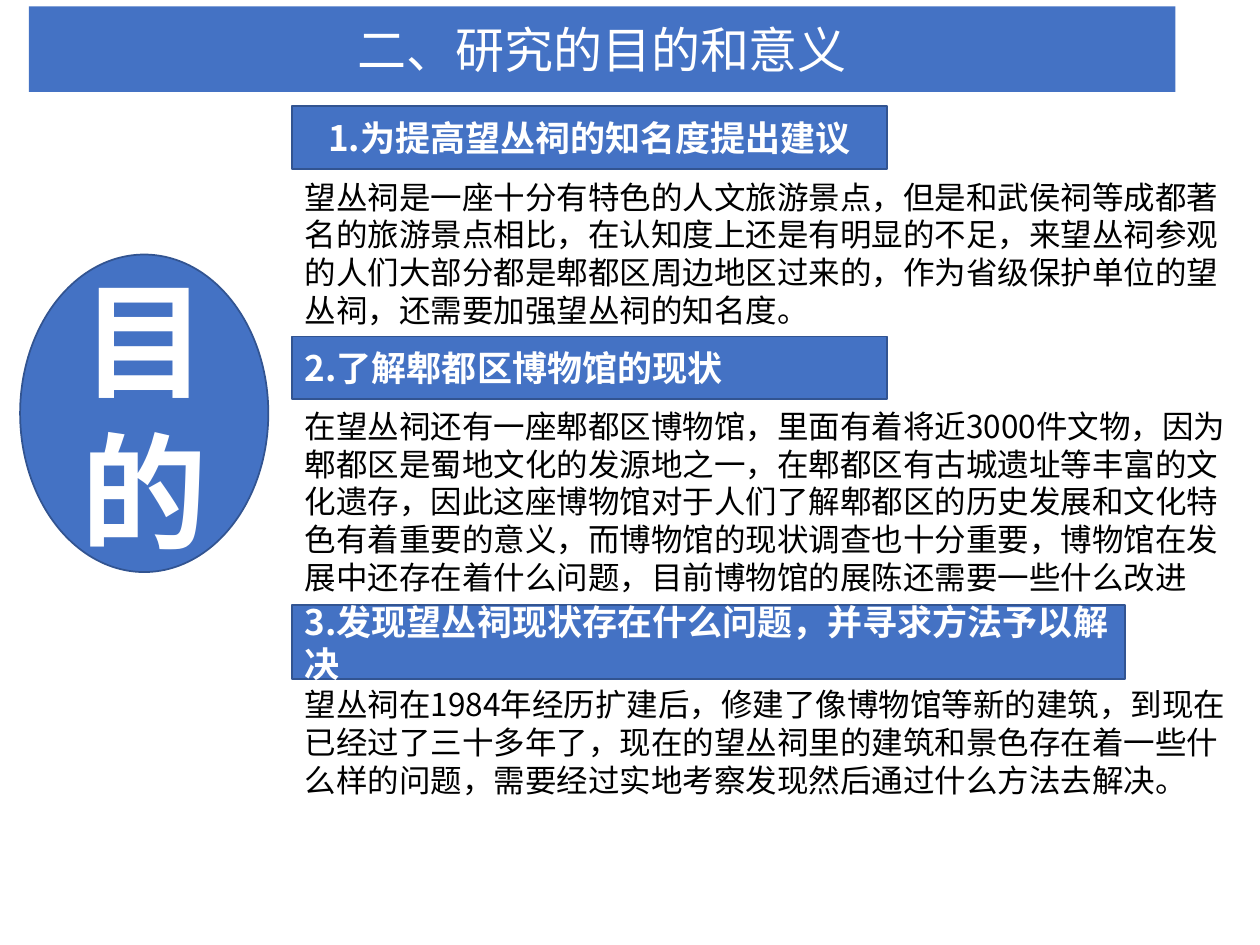
from pptx import Presentation
from pptx.dml.color import RGBColor
from pptx.enum.shapes import MSO_SHAPE
from pptx.enum.text import MSO_ANCHOR, MSO_AUTO_SIZE, PP_ALIGN
from pptx.oxml.ns import qn
from pptx.util import Inches, Pt
from lxml.etree import SubElement

COLORS = {"panel": "4472C4", "edge": "325491", "light": "FFFFFF", "dark": "000000"}
FONT = "Noto Sans CJK SC"
LINE_RATIO = 1.2
COLUMN_LEFT = 2.32


class SlideBuilder:
    def __init__(self, slide):
        self.slide = slide

    def set_text(self, element, words, size, color, bold=False, align=PP_ALIGN.LEFT, **frame_format):
        frame = element.text_frame
        for name, value in {"word_wrap": True, **frame_format}.items():
            setattr(frame, name, value)
        paragraph = frame.paragraphs[0]
        for name, value in {"alignment": align, "line_spacing": Pt(size * LINE_RATIO)}.items():
            setattr(paragraph, name, value)
        run = paragraph.add_run()
        run.text = words
        for name, value in {"name": FONT, "size": Pt(size), "bold": bold}.items():
            setattr(run.font, name, value)
        run.font.color.rgb = RGBColor.from_string(COLORS[color])
        SubElement(run._r.get_or_add_rPr(), qn("a:ea")).set("typeface", FONT)

    def panel(self, kind, box, words, size, bold=True, align=PP_ALIGN.CENTER, outlined=True):
        panel = self.slide.shapes.add_shape(kind, *map(Inches, box))
        panel.shadow.inherit = False
        panel.fill.solid()
        panel.fill.fore_color.rgb = RGBColor.from_string(COLORS["panel"])
        if outlined:
            panel.line.color.rgb = RGBColor.from_string(COLORS["edge"])
            panel.line.width = Pt(1)
        else:
            panel.line.fill.background()
        self.set_text(panel, words, size, "light", bold, align, vertical_anchor=MSO_ANCHOR.MIDDLE)

    def body(self, box, words):
        body = self.slide.shapes.add_textbox(*map(Inches, box))
        self.set_text(body, words, 18, "dark", auto_size=MSO_AUTO_SIZE.SHAPE_TO_FIT_TEXT)


SECTIONS = [
    {
        "heading": "1.为提高望丛祠的知名度提出建议",
        "heading_box": (0.84, 4.72, 0.5),
        "align": PP_ALIGN.CENTER,
        "body": "望丛祠是一座十分有特色的人文旅游景点，但是和武侯祠等成都著名的旅游景点相比，"
                "在认知度上还是有明显的不足，来望丛祠参观的人们大部分都是郫都区周边地区过来的，"
                "作为省级保护单位的望丛祠，还需要加强望丛祠的知名度。",
        "body_box": (1.36, 7.68, 1.31),
    },
    {
        "heading": "2.了解郫都区博物馆的现状",
        "heading_box": (2.67, 4.72, 0.5),
        "align": PP_ALIGN.LEFT,
        "body": "在望丛祠还有一座郫都区博物馆，里面有着将近3000件文物，因为郫都区是蜀地文化的发源地之一，"
                "在郫都区有古城遗址等丰富的文化遗存，因此这座博物馆对于人们了解郫都区的历史发展和"
                "文化特色有着重要的意义，而博物馆的现状调查也十分重要，博物馆在发展中还存在着什么问题，"
                "目前博物馆的展陈还需要一些什么改进",
        "body_box": (3.18, 7.64, 1.62),
    },
    {
        "heading": "3.发现望丛祠现状存在什么问题，并寻求方法予以解决",
        "heading_box": (4.8, 6.61, 0.59),
        "align": PP_ALIGN.LEFT,
        "body": "望丛祠在1984年经历扩建后，修建了像博物馆等新的建筑，到现在已经过了三十多年了，"
                "现在的望丛祠里的建筑和景色存在着一些什么样的问题，"
                "需要经过实地考察发现然后通过什么方法去解决。",
        "body_box": (5.39, 7.64, 1.01),
    },
]


def main():
    deck = Presentation()
    deck.slide_width, deck.slide_height = Inches(10), Inches(7.5)
    builder = SlideBuilder(deck.slides.add_slide(deck.slide_layouts[6]))
    builder.panel(MSO_SHAPE.RECTANGLE, (0.23, 0.05, 9.1, 0.68), "二、研究的目的和意义", 28,
                  bold=False, outlined=False)
    builder.panel(MSO_SHAPE.OVAL, (0.16, 2.02, 1.97, 2.52), "目的", 72)
    for section in SECTIONS:
        builder.panel(MSO_SHAPE.RECTANGLE, (COLUMN_LEFT, *section["heading_box"]),
                      section["heading"], 20, align=section["align"])
        builder.body((COLUMN_LEFT, *section["body_box"]), section["body"])
    deck.save("out.pptx")


if __name__ == "__main__":
    main()
